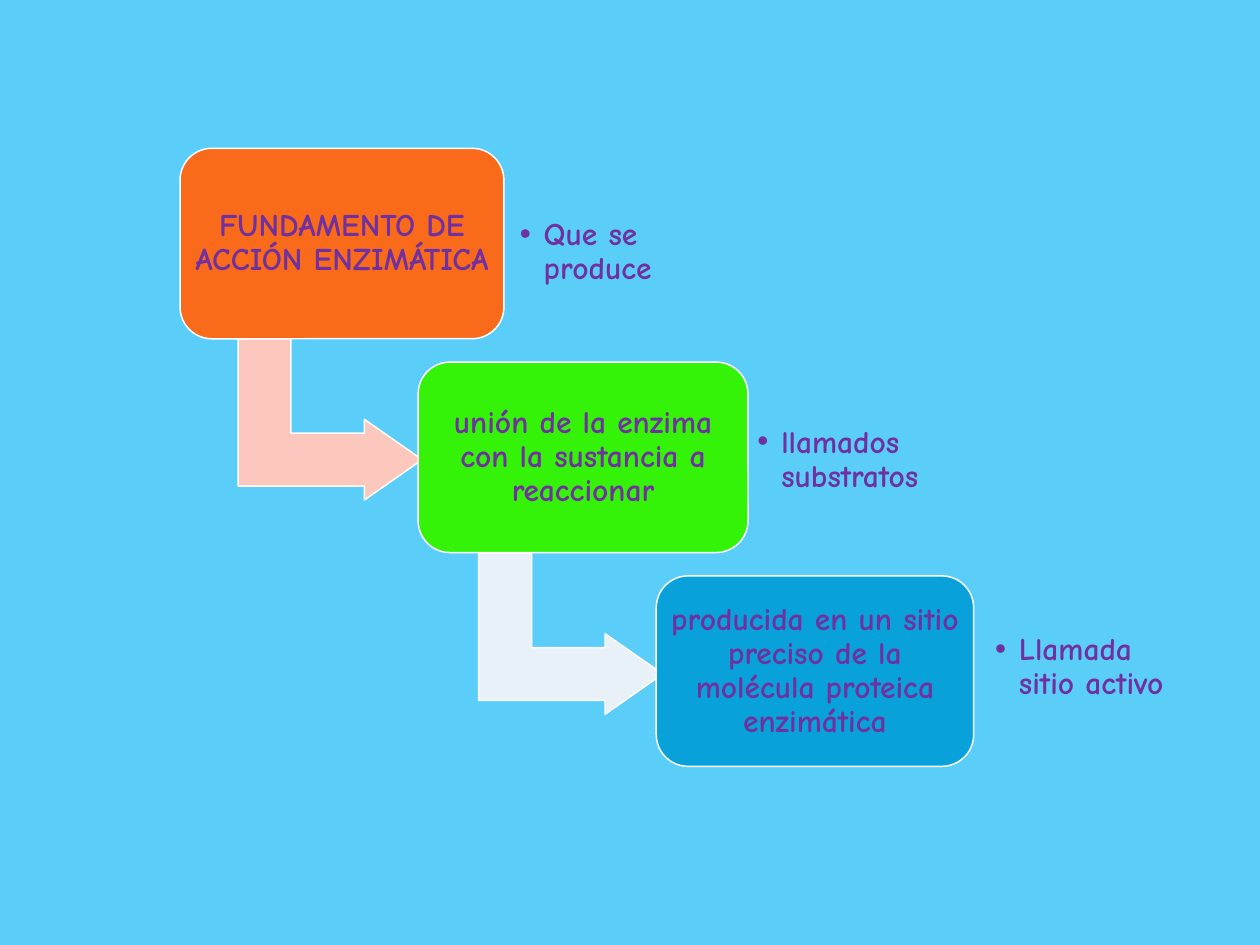
"""Build the stepped slide on how enzymes act."""
import lxml.etree
import pptx
import pptx.dml.color
import pptx.enum.shapes
import pptx.enum.text
import pptx.oxml.ns
import pptx.util

Cm = pptx.util.Cm
Pt = pptx.util.Pt
Kind = pptx.enum.shapes.MSO_SHAPE
Align = pptx.enum.text.PP_ALIGN

HUES = {
    "sky": "5ACEF8", "text": "7030A0", "edge": "FFFFFF",
    "orange": "F96A1B", "green": "34F308", "blue": "08A1D9",
    "pink": "FCC7BD", "pale": "E8F0F8",
}


class Deck:
    """Style and current slide."""

    font = "Comic Neue"
    size = 18

    def __init__(self):
        self.file = pptx.Presentation()
        self.file.slide_width, self.file.slide_height = Cm(25.4), Cm(19.05)
        self.slide = self.file.slides.add_slide(self.file.slide_layouts[4])
        self.paint(self.slide.background.fill, "sky")

    def hue(self, name):
        return pptx.dml.color.RGBColor.from_string(HUES[name])

    def paint(self, fill, name):
        fill.solid()
        fill.fore_color.rgb = self.hue(name)

    def shape(self, kind, area, fill, adjust):
        item = self.slide.shapes.add_shape(kind, *map(Cm, area))
        item.shadow.inherit = False
        self.paint(item.fill, fill)
        item.line.color.rgb = self.hue("edge")
        item.line.width = Pt(0.85)
        for spot, value in enumerate(adjust):
            item.adjustments[spot] = value
        return item

    def label(self, item, text, inset, align):
        frame = item.text_frame
        frame.word_wrap = True
        frame.auto_size = pptx.enum.text.MSO_AUTO_SIZE.NONE
        frame.vertical_anchor = pptx.enum.text.MSO_ANCHOR.MIDDLE
        frame.margin_left = frame.margin_right = Cm(inset)
        frame.margin_top = frame.margin_bottom = Cm(inset)
        para = frame.paragraphs[0]
        para.alignment = align
        para.line_spacing = 0.9
        para.space_before = Pt(0)
        run = para.add_run()
        run.text = text
        run.font.name = self.font
        run.font.size = Pt(self.size)
        run.font.bold = True
        run.font.color.rgb = self.hue("text")

    def box(self, area, fill, text):
        item = self.shape(Kind.ROUNDED_RECTANGLE, area, fill, [0.167])
        self.label(item, text, 0, Align.CENTER)

    def arrow(self, area, fill):
        item = self.shape(Kind.BENT_UP_ARROW, area, fill, [0.328, 0.25, 0.358])
        item.rotation = 90

    def bullet(self, slot, area, text):
        item = self.slide.placeholders[slot]
        item.left, item.top, item.width, item.height = map(Cm, area)
        props = item.text_frame.paragraphs[0]._p.get_or_add_pPr()
        props.set("marL", str(Cm(0.48)))
        props.set("indent", str(Cm(-0.48)))
        mark = lxml.etree.SubElement(props, pptx.oxml.ns.qn("a:buChar"))
        mark.set("char", "•")
        self.label(item, text, 0.18, Align.LEFT)

    def save(self):
        for item in list(self.slide.placeholders):
            if not item.text_frame.text:
                item.element.getparent().remove(item.element)
        self.file.save("out.pptx")


def main():
    deck = Deck()
    steps = [
        ("orange", 6.53, "FUNDAMENTO DE ACCIÓN ENZIMÁTICA",
         1, 3.99, "Que se produce", "pink"),
        ("green", 6.65, "unión de la enzima con la sustancia a reaccionar",
         2, 5.33, "llamados substratos", "pale"),
        ("blue", 6.4, "producida en un sitio preciso de la molécula proteica enzimática",
         4, 3.99, "Llamada sitio activo", None),
    ]
    for row, (fill, wide, text, slot, span, note, next_hue) in enumerate(steps):
        if next_hue:
            deck.arrow((5.03 + 4.85 * row, 6.6 + 4.32 * row, 3.25, 3.71), next_hue)
        deck.box((3.63 + 4.8 * row, 2.99 + 4.31 * row, wide, 3.84), fill, text)
        deck.bullet(slot, (10.3 + 4.79 * row, 3.53 + 4.19 * row, span, 3.1), note)
    deck.save()


if __name__ == "__main__":
    main()
